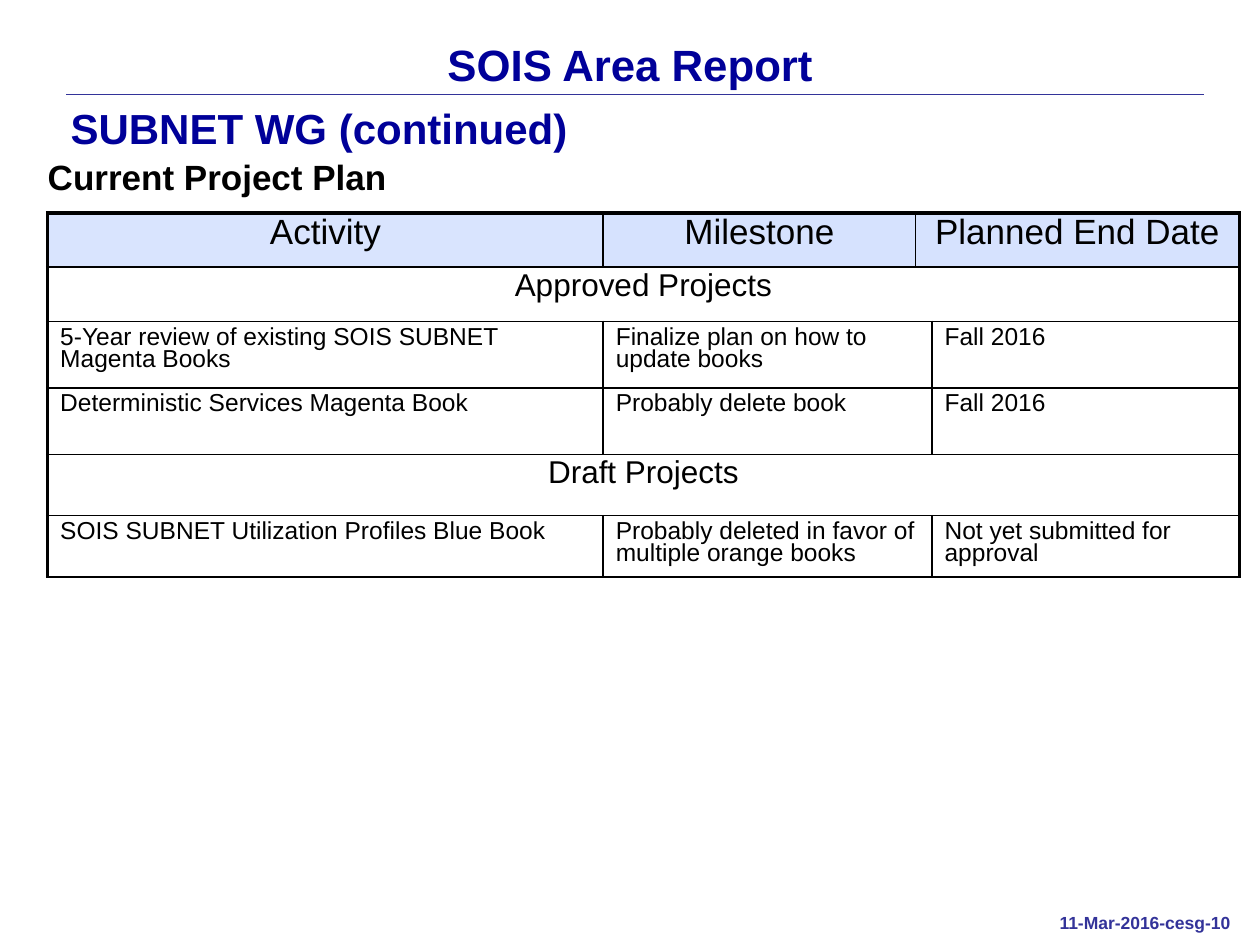
from lxml import etree
from pptx import Presentation
from pptx import util as u
from pptx.dml.color import RGBColor
from pptx.enum import shapes, text
from pptx.oxml.ns import qn

LEFT, MID = text.PP_ALIGN.LEFT, text.PP_ALIGN.CENTER


def hue(code):
    return RGBColor.from_string(code)


class Deck:
    font = "Arial"
    ink, navy, blue = "000000", "000099", "333399"
    thin, thick = 1, 2.25

    def __init__(self):
        self.prs = Presentation()
        self.prs.slide_width, self.prs.slide_height = u.Pt(720), u.Pt(540)
        self.slide = self.prs.slides.add_slide(self.prs.slide_layouts[6])

    def say(self, frame, words, size, color, bold=False, align=LEFT, gap=1):
        para = frame.paragraphs[0]
        para.alignment, para.line_spacing = align, gap
        run = para.add_run()
        run.text = words
        font = run.font
        font.name, font.size, font.bold = self.font, u.Pt(size), bold
        font.color.rgb = hue(color)

    def label(self, box, words, size, color, pad=(7.2, 3.6), wrap=True, **look):
        frame = self.slide.shapes.add_textbox(*map(u.Pt, box)).text_frame
        frame.word_wrap = wrap
        frame.margin_left = frame.margin_right = u.Pt(pad[0])
        frame.margin_top = frame.margin_bottom = u.Pt(pad[1])
        self.say(frame, words, size, color, bold=True, **look)

    def rule(self, start, end, color, width):
        line = self.slide.shapes.add_connector(
            shapes.MSO_CONNECTOR.STRAIGHT, *map(u.Pt, start + end))
        line.line.color.rgb = hue(color)
        line.line.width = u.Pt(width)
        etree.SubElement(line._element.spPr, qn("a:effectLst"))

    def paint(self, cell, fill):
        if not fill:
            cell.fill.background()
            return
        color, alpha = fill
        cell.fill.solid()
        cell.fill.fore_color.rgb = hue(color)
        tone = cell._tc.tcPr.find(".//" + qn("a:srgbClr"))
        etree.SubElement(tone, qn("a:alpha"), val=str(alpha * 1000))

    def edge(self, cell, sides):
        props = cell._tc.get_or_add_tcPr()
        for spot, (side, width) in enumerate(sides.items()):
            line = etree.Element(qn("a:ln" + side), w=str(u.Pt(width)))
            fill = etree.SubElement(line, qn("a:solidFill"))
            etree.SubElement(fill, qn("a:srgbClr"), val=self.ink)
            props.insert(spot, line)

    def table(self, box, cols, rows, plan):
        grid = self.slide.shapes.add_table(
            len(rows), len(cols), *map(u.Pt, box)).table
        for col, width in zip(grid.columns, cols):
            col.width = u.Pt(width)
        for row, high in zip(grid.rows, rows):
            row.height = u.Pt(high)
        last = len(cols) - 1
        for r, (spans, size, align, fills, words) in enumerate(plan):
            start = 0
            for span, fill, word in zip(spans, fills, words):
                end = start + span - 1
                cell = grid.cell(r, start)
                if span > 1:
                    cell.merge(grid.cell(r, end))
                self.say(cell.text_frame, word, size, self.ink,
                         align=align, gap=0.8)
                for c in range(start, end + 1):
                    part = grid.cell(r, c)
                    self.paint(part, fill)
                    sides = {}
                    if c == start:
                        sides["L"] = self.thin if c else self.thick
                    if c in (start, end):
                        sides["R"] = self.thick if end == last else self.thin
                    sides["T"] = self.thin if r else self.thick
                    sides["B"] = self.thin
                    self.edge(part, sides)
                start = end + 1

    def save(self):
        self.prs.save("out.pptx")


def head(*words):
    tints = [("618FFD", alpha) for alpha in (24, 26, 26)]
    return (1, 1, 2), 20, MID, tints, words


def band(word, fill=None):
    return (4,), 18, MID, [fill], [word]


def task(*words):
    return (1, 2, 1), 14, LEFT, [None] * 3, words


def main():
    deck = Deck()
    deck.rule((38, 54), (688, 54), deck.blue, 0.13)
    deck.label((599, 518.4, 113, 18.7), "11-Mar-2016-cesg-10", 10, deck.blue,
               pad=(6.5, 2.9), wrap=False)
    deck.label((36, 21.6, 648, 90), "SOIS Area Report", 25, deck.navy,
               align=MID, gap=0.9)
    deck.label((36, 54.5, 450, 36.7), "SUBNET WG (continued)", 24, deck.navy,
               pad=(4.3, 4.3))
    deck.label((20.2, 90, 648, 30), "Current Project Plan", 20, deck.ink,
               gap=0.8)
    deck.table((27.2, 121.7, 681, 208), (317.5, 178.5, 9.4, 175.6),
               (31, 31, 38, 38, 35, 35), [
        head("Activity", "Milestone", "Planned End Date"),
        band("Approved Projects", ("FFFFFF", 24)),
        task("5-Year review of existing SOIS SUBNET Magenta Books",
             "Finalize plan on how to update books", "Fall 2016"),
        task("Deterministic Services Magenta Book",
             "Probably delete book", "Fall 2016"),
        band("Draft Projects"),
        task("SOIS SUBNET Utilization Profiles Blue Book",
             "Probably deleted in favor of multiple orange books",
             "Not yet submitted for approval"),
    ])
    deck.save()


if __name__ == "__main__":
    main()
